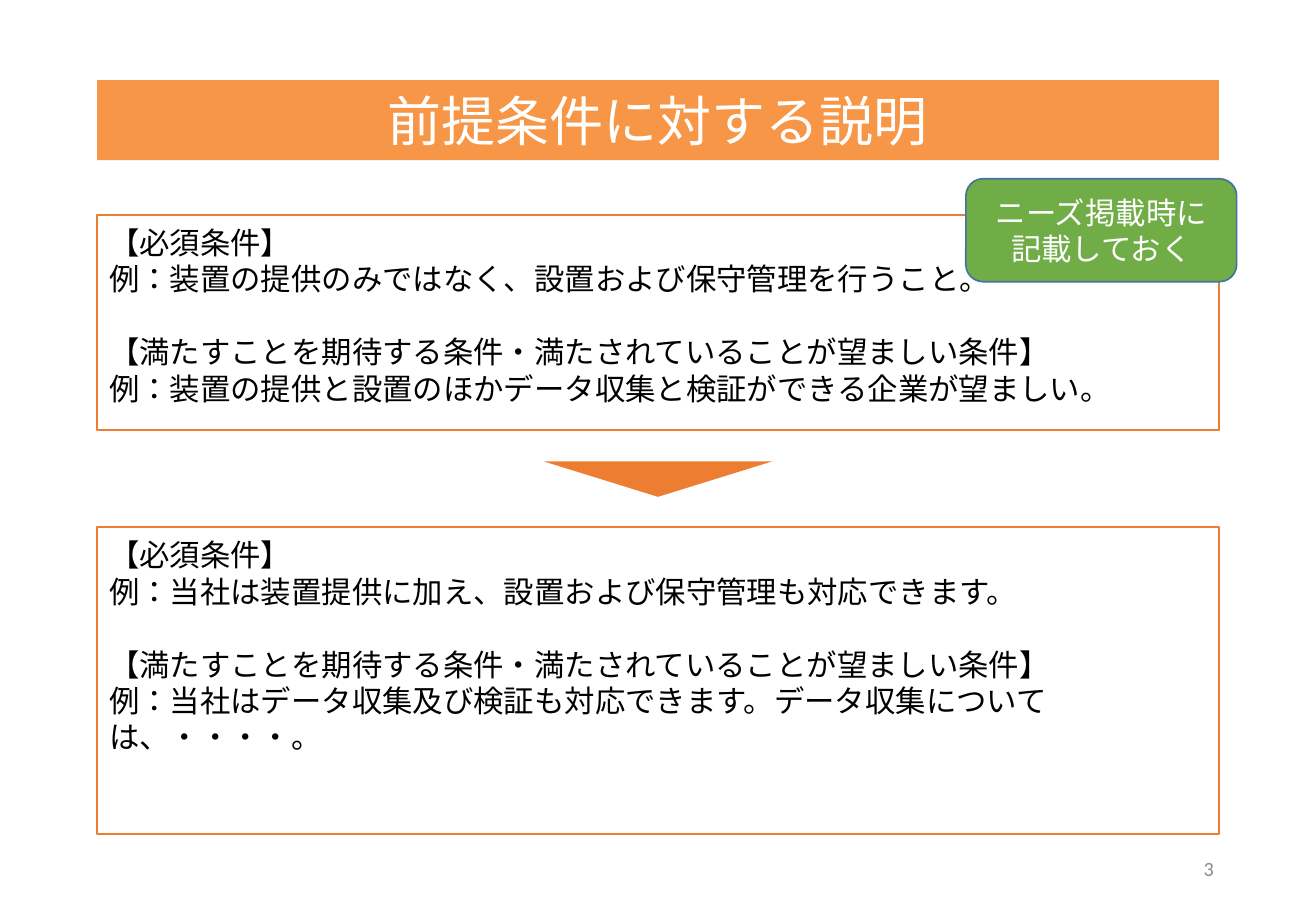
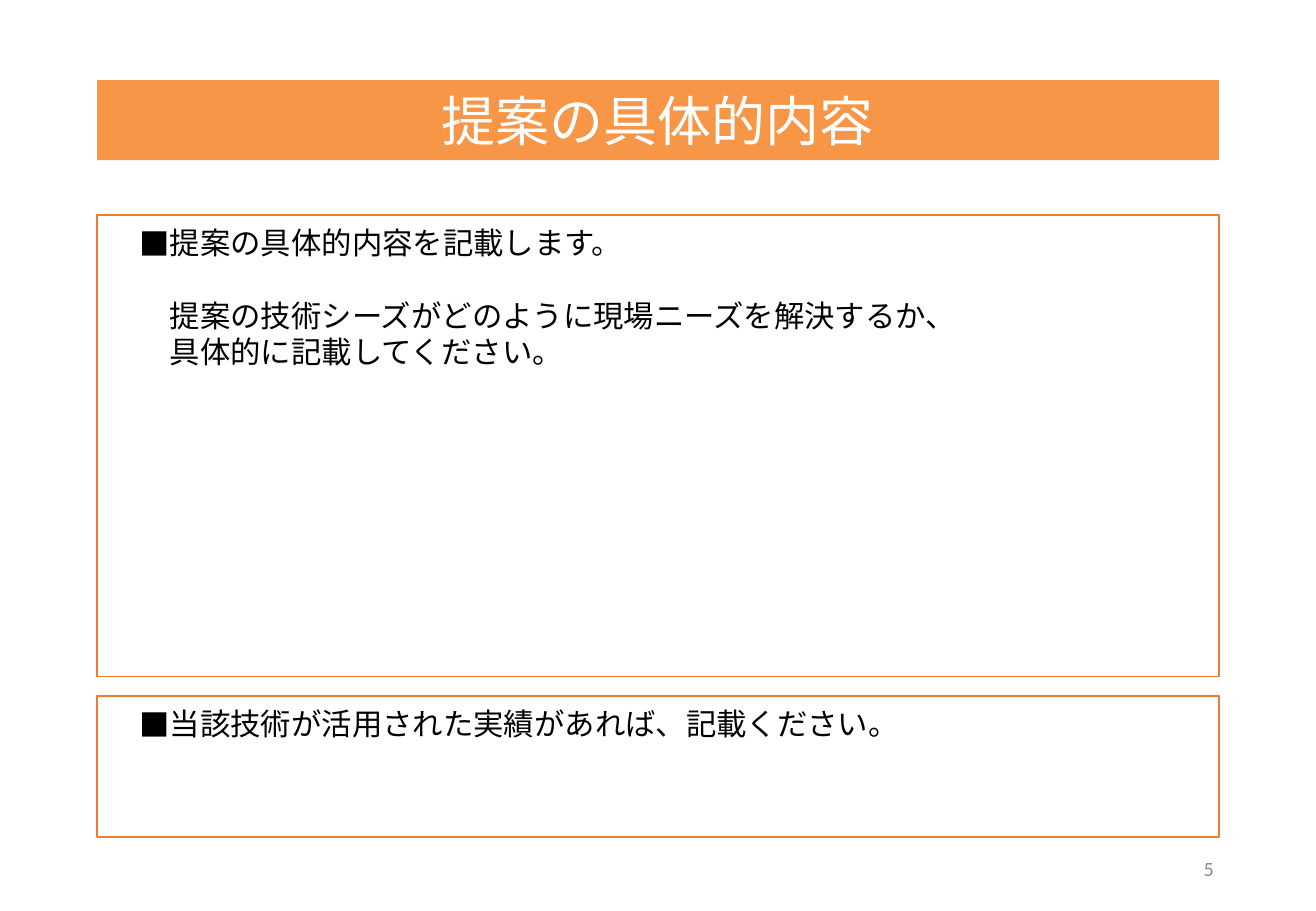
from pptx import Presentation
from pptx.dml.color import RGBColor
from pptx.enum import lang, shapes, text
from pptx.oxml import ns
from pptx.util import Pt
from lxml import etree

BAND = RGBColor(0xF7, 0x96, 0x46)
ACCENT = RGBColor(0xED, 0x7D, 0x31)
GREEN = RGBColor(0x70, 0xAD, 0x47)
GREEN_EDGE = RGBColor(0x43, 0x73, 0x9E)
WHITE = RGBColor(0xFF, 0xFF, 0xFF)
BLACK = RGBColor(0, 0, 0)
GREY = RGBColor(0x8C, 0x8C, 0x8C)

JAPANESE_FONT = "Noto Sans CJK JP"
NUMBER_FONT = "Calibri"

SLIDE_W, SLIDE_H = 780, 540
MARGIN = 57.6
CONTENT_W = SLIDE_W - 2 * MARGIN
BAND_TOP = BAND_H = 47.5
BODY_TOP = 127.5
BODY_SIZE = 18
LINE = 21.6
INDENT = 18

REQUIRED = "【必須条件】"
DESIRED = "【満たすことを期待する条件・満たされていることが望ましい条件】"


def style(paragraph, size, color, align, font_name=JAPANESE_FONT):
    paragraph.alignment = align
    font = paragraph.font
    font.name, font.size, font.color.rgb = font_name, Pt(size), color
    font.language_id = lang.MSO_LANGUAGE_ID.JAPANESE
    latin = font._element.find(ns.qn("a:latin"))
    east_asian = etree.Element(ns.qn("a:ea"), typeface=font_name)
    latin.addnext(east_asian)


def write_lines(frame, lines, color=BLACK, align=text.PP_ALIGN.LEFT):
    """Write one body paragraph per line and return the paragraphs."""
    frame.word_wrap = True
    frame.text = "\n".join(lines)
    for paragraph in frame.paragraphs:
        style(paragraph, BODY_SIZE, color, align)
        paragraph.line_spacing = Pt(LINE)
    return frame.paragraphs


def indent(paragraph, bullet=None):
    """Indent by two characters; a bullet hangs in the second one."""
    properties = paragraph._p.get_or_add_pPr()
    properties.set("marL", str(Pt(2 * INDENT)))
    if bullet:
        properties.set("indent", str(-Pt(INDENT)))
        bullet_font = etree.Element(ns.qn("a:buFont"), typeface=JAPANESE_FONT)
        bullet_char = etree.Element(ns.qn("a:buChar"), char=bullet)
        properties.find(ns.qn("a:defRPr")).addprevious(bullet_font)
        bullet_font.addnext(bullet_char)


def add_block(slide, preset, left, top, width, height, fill, edge=None):
    block = slide.shapes.add_shape(preset, Pt(left), Pt(top), Pt(width), Pt(height))
    block.shadow.inherit = False
    block.fill.solid()
    block.fill.fore_color.rgb = fill
    if edge is None:
        block.line.fill.background()
    else:
        block.line.color.rgb = edge
        block.line.width = Pt(1)
    return block


def add_panel(slide, top, height, lines):
    """Add a full-width outlined panel and return its paragraphs."""
    panel = add_block(slide, shapes.MSO_SHAPE.RECTANGLE, MARGIN, top,
                      CONTENT_W, height, WHITE, ACCENT)
    frame = panel.text_frame
    frame.vertical_anchor = text.MSO_ANCHOR.TOP
    frame.margin_top = Pt(5.4)
    return write_lines(frame, lines)


def add_conditions(slide, top, height, required, desired):
    paragraphs = add_panel(slide, top, height, [REQUIRED, required, DESIRED, desired])
    paragraphs[2].space_before = Pt(LINE)


def add_down_arrow(slide, top, width, height):
    arrow = add_block(slide, shapes.MSO_SHAPE.ISOSCELES_TRIANGLE,
                      (SLIDE_W - width) / 2, top, width, height, ACCENT)
    arrow.rotation = 180


def add_callout(slide, left, top, width, height, lines):
    callout = add_block(slide, shapes.MSO_SHAPE.ROUNDED_RECTANGLE,
                        left, top, width, height, GREEN, GREEN_EDGE)
    callout.text_frame.vertical_anchor = text.MSO_ANCHOR.MIDDLE
    write_lines(callout.text_frame, lines, WHITE, text.PP_ALIGN.CENTER)


def add_page(deck, heading, number):
    """Add a slide with the title band and the page number."""
    slide = deck.slides.add_slide(deck.slide_layouts[5])
    title = slide.shapes.title
    title.left, title.top = Pt(MARGIN), Pt(BAND_TOP)
    title.width, title.height = Pt(CONTENT_W), Pt(BAND_H)
    title.fill.solid()
    title.fill.fore_color.rgb = BAND
    frame = title.text_frame
    frame.text = heading
    frame.auto_size = text.MSO_AUTO_SIZE.NONE
    frame.vertical_anchor = text.MSO_ANCHOR.MIDDLE
    frame.margin_left = frame.margin_right = frame.margin_top = frame.margin_bottom = 0
    style(frame.paragraphs[0], 32, WHITE, text.PP_ALIGN.CENTER)

    page_number = slide.shapes.add_textbox(Pt(551), Pt(500.5), Pt(175.5), Pt(29))
    frame = page_number.text_frame
    frame.word_wrap = True
    frame.vertical_anchor = text.MSO_ANCHOR.MIDDLE
    frame.text = str(number)
    style(frame.paragraphs[0], 12, GREY, text.PP_ALIGN.RIGHT, NUMBER_FONT)
    return slide


def build_preconditions(deck):
    slide = add_page(deck, "前提条件に対する説明", 3)
    add_conditions(slide, BODY_TOP, 127.5,
                   "例：装置の提供のみではなく、設置および保守管理を行うこと。",
                   "例：装置の提供と設置のほかデータ収集と検証ができる企業が望ましい。")
    add_conditions(slide, 312.5, 182,
                   "例：当社は装置提供に加え、設置および保守管理も対応できます。",
                   "例：当社はデータ収集及び検証も対応できます。データ収集については、・・・・。")
    add_down_arrow(slide, 273.5, 135.5, 21)
    add_callout(slide, 572.5, 106, 160.5, 61, ["ニーズ掲載時に", "記載しておく"])


def build_proposal(deck):
    slide = add_page(deck, "提案の具体的内容", 5)
    content, question, request = add_panel(slide, BODY_TOP, 273.5, [
        "提案の具体的内容を記載します。",
        "提案の技術シーズがどのように現場ニーズを解決するか、",
        "具体的に記載してください。",
    ])
    question.space_before = Pt(LINE)
    [track_record] = add_panel(slide, 412.5, 83.5,
                               ["当該技術が活用された実績があれば、記載ください。"])
    for heading in (content, track_record):
        indent(heading, "■")
    for detail in (question, request):
        indent(detail)


def main():
    deck = Presentation()
    deck.slide_width, deck.slide_height = Pt(SLIDE_W), Pt(SLIDE_H)
    build_preconditions(deck)
    build_proposal(deck)
    deck.save("out.pptx")


if __name__ == "__main__":
    main()
